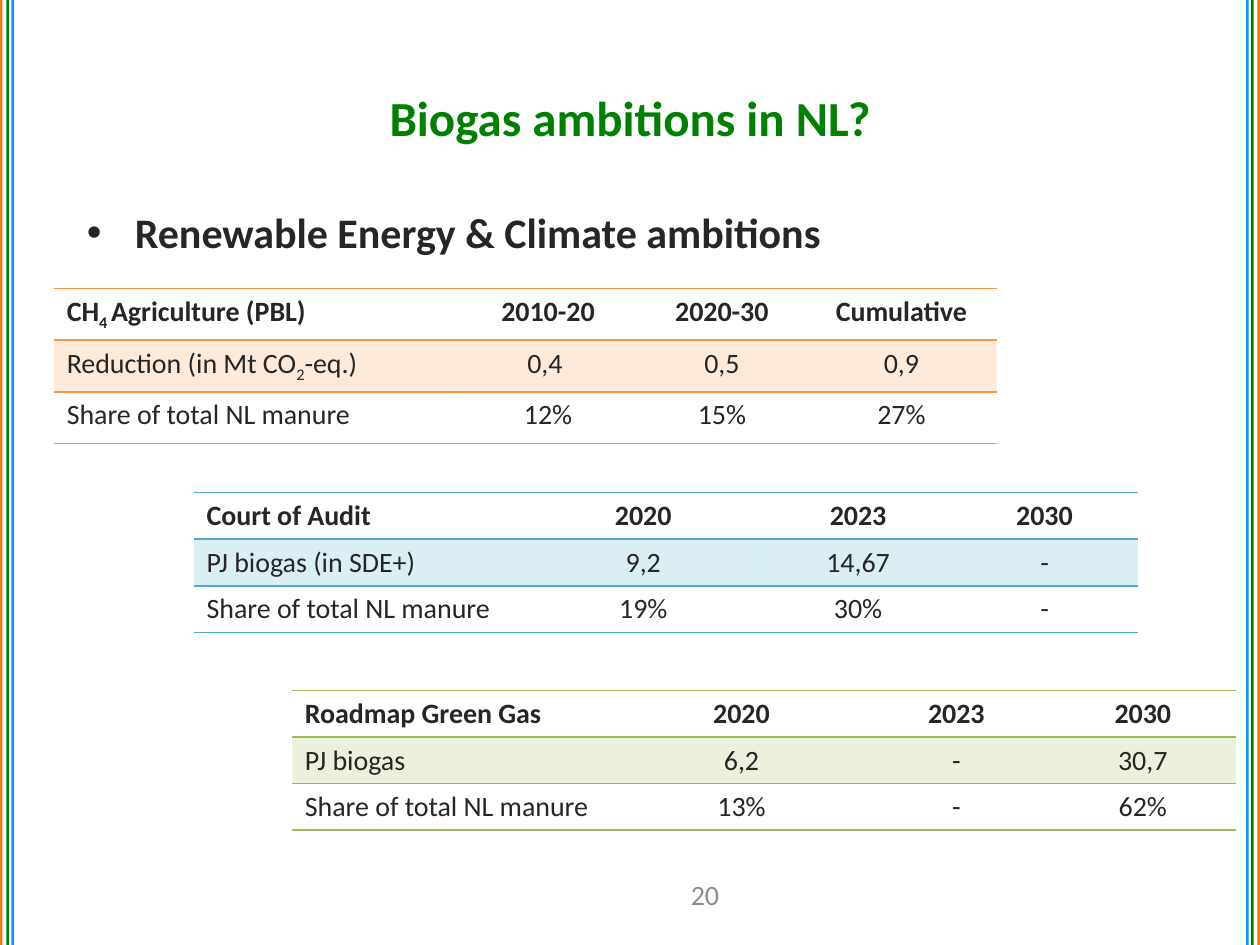
from lxml.etree import SubElement
from pptx import Presentation
from pptx.dml.color import RGBColor
from pptx.enum.shapes import MSO_SHAPE
from pptx.enum.text import MSO_ANCHOR, MSO_AUTO_SIZE, PP_ALIGN
from pptx.oxml.ns import qn
from pptx.util import Inches, Pt

FONT = "Calibri"
GREEN = RGBColor(0x00, 0x80, 0x00)
DARK = RGBColor(0x26, 0x26, 0x26)
GRAY = RGBColor(0x8C, 0x8C, 0x8C)
STRIPE_ORANGE = RGBColor(0xF6, 0x76, 0x16)
STRIPE_BLUE = RGBColor(0x00, 0x99, 0xFF)
ORANGE = RGBColor(0xF7, 0x96, 0x46)
TEAL = RGBColor(0x4B, 0xAC, 0xC6)
LIME = RGBColor(0x9B, 0xBB, 0x59)
NO_STYLE = "{2D5ABB26-0587-4C30-8999-92F81FD0307C}"
SUBSCRIPT_MARK = "~"

SLIDE_WIDTH, SLIDE_HEIGHT = 10, 7.5
STRIPE_WIDTH = 0.02
STRIPES = [(0, STRIPE_ORANGE), (0.05, GREEN), (0.09, STRIPE_BLUE)]

TITLE = "Biogas ambitions in NL?"
BULLET = "Renewable Energy & Climate ambitions"
PAGE_NUMBER = "20"

YEAR_COLUMNS = [2.6, 1.93, 1.48, 1.48]
TABLES = [
    {"left": 0.43, "top": 2.29, "columns": [3.21, 1.42, 1.34, 1.51], "row_height": 0.41, "accent": ORANGE,
     "rows": [["CH~4 ~Agriculture (PBL)", "2010-20", "2020-30", "Cumulative"],
              ["Reduction (in Mt CO~2~-eq.)", "0,4 ", "0,5", "0,9"],
              ["Share of total NL manure", "12%", "15%", "27%"]]},
    {"left": 1.54, "top": 3.91, "columns": YEAR_COLUMNS, "row_height": 0.37, "accent": TEAL,
     "rows": [["Court of Audit", "2020", "2023", "2030"],
              ["PJ biogas (in SDE+)", "9,2", "14,67", "-"],
              ["Share of total NL manure", "19%", "30%", "-"]]},
    {"left": 2.32, "top": 5.48, "columns": YEAR_COLUMNS, "row_height": 0.37, "accent": LIME,
     "rows": [["Roadmap Green Gas", "2020", "2023", "2030"],
              ["PJ biogas", "6,2", "-", "30,7"],
              ["Share of total NL manure", "13%", "-", "62%"]]},
]


def style_font(font, size, color, bold=False):
    font.name = FONT
    font.size = Pt(size)
    font.bold = bold
    font.color.rgb = color


def place(shape, left, top, width, height):
    shape.left, shape.top = Inches(left), Inches(top)
    shape.width, shape.height = Inches(width), Inches(height)


def add_stripe(slide, left, color):
    stripe = slide.shapes.add_shape(MSO_SHAPE.RECTANGLE, Inches(left), 0,
                                    Inches(STRIPE_WIDTH), Inches(SLIDE_HEIGHT))
    stripe.shadow.inherit = False
    stripe.fill.solid()
    stripe.fill.fore_color.rgb = color
    stripe.line.fill.background()


def add_border(cell, side, color):
    line = SubElement(cell._tc.get_or_add_tcPr(), qn(f"a:{side}"), w=str(Pt(1)))
    fill = SubElement(line, qn("a:solidFill"))
    SubElement(fill, qn("a:srgbClr"), val=str(color))


def fill_tint(cell, color):
    cell.fill.solid()
    cell.fill.fore_color.rgb = color
    color_element = cell._tc.tcPr.find(qn("a:solidFill")).find(qn("a:srgbClr"))
    SubElement(color_element, qn("a:alpha"), val="20000")


def write_cell(cell, text, bold, centered):
    paragraph = cell.text_frame.paragraphs[0]
    paragraph.alignment = PP_ALIGN.CENTER if centered else PP_ALIGN.LEFT
    for index, part in enumerate(text.split(SUBSCRIPT_MARK)):
        run = paragraph.add_run()
        run.text = part
        style_font(run.font, 16, DARK, bold)
        if index % 2:
            run.font._element.set("baseline", "-25000")


def add_data_table(slide, left, top, columns, row_height, accent, rows):
    frame = slide.shapes.add_table(len(rows), len(columns), Inches(left), Inches(top),
                                   Inches(sum(columns)), Inches(row_height * len(rows)))
    table = frame.table
    table._tbl.tblPr.find(qn("a:tableStyleId")).text = NO_STYLE
    for column, width in zip(table.columns, columns):
        column.width = Inches(width)
    for row_index, row in enumerate(rows):
        table.rows[row_index].height = Inches(row_height)
        for column_index, text in enumerate(row):
            cell = table.cell(row_index, column_index)
            write_cell(cell, text, row_index == 0, column_index > 0)
            if row_index < 2:
                add_border(cell, "lnT", accent)
            if row_index != 1:
                add_border(cell, "lnB", accent)
            if row_index == 1:
                fill_tint(cell, accent)
            else:
                cell.fill.background()


def main():
    presentation = Presentation()
    presentation.slide_width = Inches(SLIDE_WIDTH)
    presentation.slide_height = Inches(SLIDE_HEIGHT)
    slide = presentation.slides.add_slide(presentation.slide_layouts[1])

    for offset, color in STRIPES:
        add_stripe(slide, offset, color)
        add_stripe(slide, SLIDE_WIDTH - STRIPE_WIDTH - offset, color)

    title = slide.shapes.title
    place(title, 0.5, 0.3, 9, 1.25)
    title.text_frame.text = TITLE
    title.text_frame.vertical_anchor = MSO_ANCHOR.MIDDLE
    paragraph = title.text_frame.paragraphs[0]
    paragraph.alignment = PP_ALIGN.CENTER
    style_font(paragraph.runs[0].font, 28, GREEN, True)

    body = slide.placeholders[1]
    place(body, 0.59, 1.59, 9, 0.58)
    body.text_frame.text = BULLET
    body.text_frame.auto_size = MSO_AUTO_SIZE.NONE
    paragraph = body.text_frame.paragraphs[0]
    properties = paragraph._p.get_or_add_pPr()
    properties.set("marL", str(Inches(0.38)))
    properties.set("indent", str(Inches(-0.38)))
    SubElement(properties, qn("a:buChar"), char="•")
    paragraph.space_before = Pt(0)
    style_font(paragraph.runs[0].font, 24, DARK, True)

    number = slide.shapes.add_textbox(Inches(5.16), Inches(6.9), Inches(0.87), Inches(0.4))
    number.text_frame.text = PAGE_NUMBER
    number.text_frame.word_wrap = True
    number.text_frame.vertical_anchor = MSO_ANCHOR.MIDDLE
    paragraph = number.text_frame.paragraphs[0]
    paragraph.alignment = PP_ALIGN.CENTER
    style_font(paragraph.runs[0].font, 16, GRAY)

    for table in TABLES:
        add_data_table(slide, **table)

    presentation.save("out.pptx")


if __name__ == "__main__":
    main()
